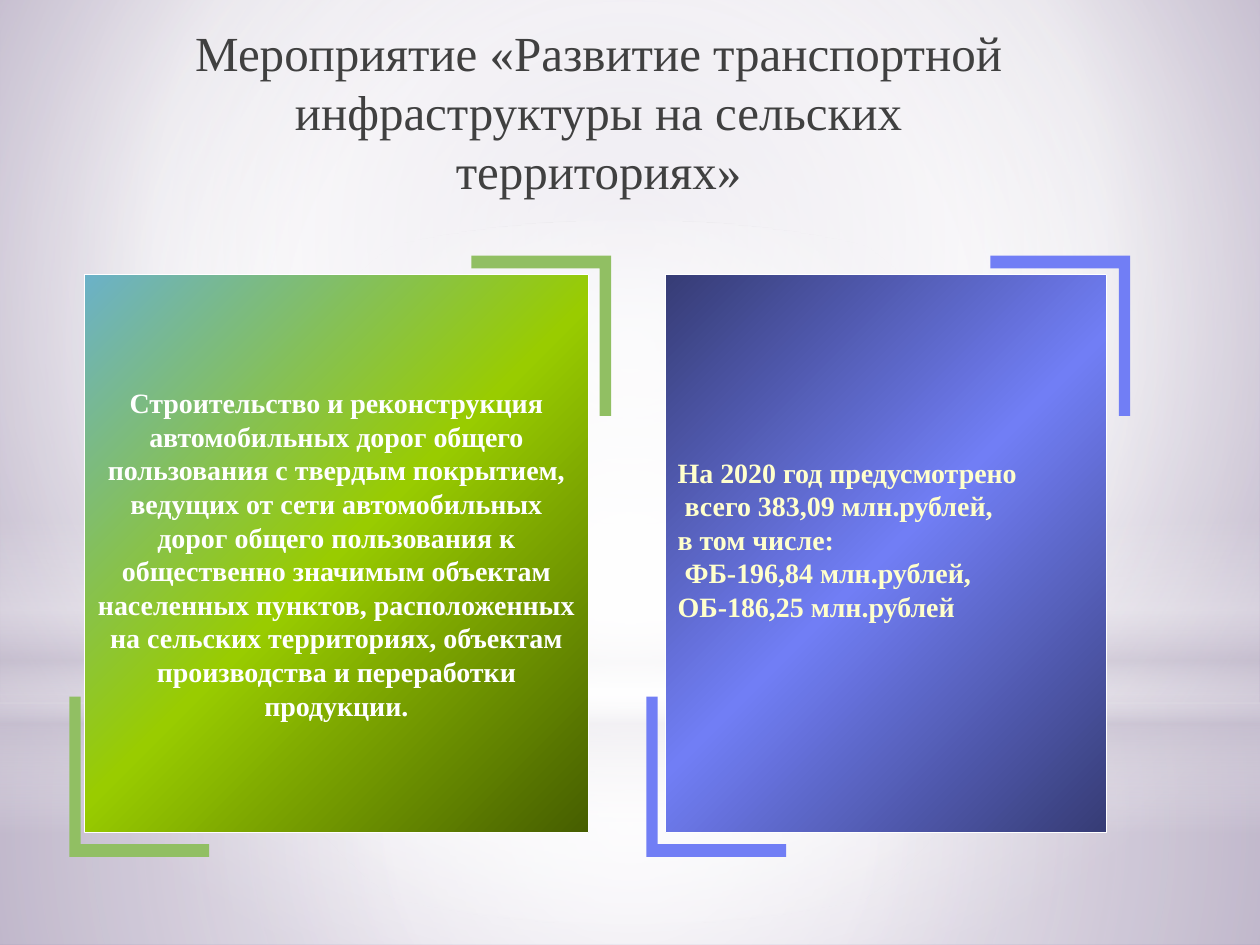
from lxml import etree
from pptx import Presentation
from pptx import util as u
from pptx.dml.color import RGBColor
from pptx.enum import shapes, text
from pptx.oxml.ns import qn


def rgb(value):
    return RGBColor.from_string(value)


def set_gradient(fill, owner, stops, angle=None, focus=(50, 50, 50, 50)):
    fill.gradient()
    gradient = next(owner.iter(qn("a:gradFill")))
    for child in list(gradient):
        gradient.remove(child)
    stop_list = etree.SubElement(gradient, qn("a:gsLst"))
    for position, value, opacity in stops:
        stop = etree.SubElement(stop_list, qn("a:gs"), pos=str(position * 1000))
        color = etree.SubElement(stop, qn("a:srgbClr"), val=value)
        if opacity < 100:
            etree.SubElement(color, qn("a:alpha"), val=str(opacity * 1000))
    if angle is not None:
        etree.SubElement(gradient, qn("a:lin"), ang=str(angle * 60000), scaled="0")
    else:
        circle = etree.SubElement(gradient, qn("a:path"), path="circle")
        sides = {side: str(share * 1000) for side, share in zip("ltrb", focus)}
        etree.SubElement(circle, qn("a:fillToRect"), **sides)


FONT = "Times New Roman"
RECT = shapes.MSO_SHAPE.RECTANGLE
OVAL = shapes.MSO_SHAPE.OVAL

prs = Presentation()
prs.slide_width, prs.slide_height = u.Inches(10), u.Inches(7.5)
slide = prs.slides.add_slide(prs.slide_layouts[5])
set_gradient(slide.background.fill, slide._element,
             [(0, "C1B7CD", 100), (60, "FFFFFF", 100), (100, "A191B5", 100)],
             focus=(20, 10, 20, 60))

backdrop = [
    (RECT, 5.58, 1.92, None,
     [(0, "FFFFFF", 91), (37, "FFFFFF", 76), (100, "C9C2D1", 79)]),
    (RECT, 0, 5.58, None,
     [(0, "FFFFFF", 89), (48, "FFFFFF", 62), (100, "C9C2D1", 79)]),
    (RECT, 4.12, 2.5, 90,
     [(0, "FFFFFF", 0), (29, "FFFFFF", 30), (45, "C9C2D1", 40),
      (55, "FFFFFF", 26), (65, "C9C2D1", 60), (100, "FFFFFF", 0)]),
    (OVAL, 1.75, 5.58, None, [(0, "FFFFFF", 100), (56, "FFFFFF", 0)]),
]
for outline, top, height, angle, stops in backdrop:
    glow = slide.shapes.add_shape(outline, 0, u.Inches(top), u.Inches(10), u.Inches(height))
    glow.shadow.inherit = False
    glow.line.fill.background()
    set_gradient(glow.fill, glow._element, stops, angle)

title = slide.shapes.title
slide.shapes._spTree.append(title._element)
title.left, title.top = u.Inches(1.19), u.Inches(0.13)
title.width, title.height = u.Inches(7.12), u.Inches(1.25)
title.text_frame.word_wrap = True
title.text_frame.auto_size = text.MSO_AUTO_SIZE.NONE
title.text_frame.vertical_anchor = text.MSO_ANCHOR.TOP
heading = title.text_frame.paragraphs[0]
heading.alignment = text.PP_ALIGN.CENTER
heading_run = heading.add_run()
heading_run.text = "Мероприятие «Развитие транспортной инфраструктуры на сельских территориях»"
heading_run.font.name = FONT
heading_run.font.size = u.Pt(28)
heading_run.font.color.rgb = rgb("404040")

CARD_TOP, CARD_HEIGHT = 2.18, 4.43
BRACKET_TOP, BRACKET_BOTTOM = 2.03, 6.8
ARM, RISE, BAR_WIDTH, BAR_HEIGHT = 1.11, 1.27, 0.09, 0.1

cards = [
    (0.67, 4, 0.55, 4.85, "91BF63", ("6BB1C9", "99CC00", "465E00"),
     "FFFFFF", text.PP_ALIGN.CENTER, 0.05,
     ["Строительство и реконструкция автомобильных дорог общего пользования "
      "с твердым покрытием, ведущих от сети автомобильных дорог общего пользования "
      "к общественно значимым объектам населенных пунктов, расположенных "
      "на сельских территориях, объектам производства и переработки продукции."]),
    (5.28, 3.5, 5.13, 8.97, "717EF5", ("363C75", "717EF5", "363C75"),
     "FFFFCC", text.PP_ALIGN.LEFT, 0.28,
     ["На 2020 год предусмотрено", " всего 383,09 млн.рублей,", "в том числе:",
      " ФБ-196,84 млн.рублей,", "ОБ-186,25 млн.рублей"]),
]
for (left, width, bracket_left, bracket_right, accent, shades,
     ink, alignment, bottom_inset, lines) in cards:
    for x, y, way in ((bracket_left, BRACKET_BOTTOM, 1), (bracket_right, BRACKET_TOP, -1)):
        offsets = [(ARM, 0), (ARM, BAR_HEIGHT), (BAR_WIDTH, BAR_HEIGHT),
                   (BAR_WIDTH, RISE), (0, RISE)]
        outline = slide.shapes.build_freeform(u.Inches(x), u.Inches(y))
        outline.add_line_segments(
            [(u.Inches(x + way * dx), u.Inches(y - way * dy)) for dx, dy in offsets])
        bracket = outline.convert_to_shape()
        bracket.shadow.inherit = False
        bracket.fill.solid()
        bracket.fill.fore_color.rgb = rgb(accent)
        bracket.line.fill.background()

    card = slide.shapes.add_shape(RECT, u.Inches(left), u.Inches(CARD_TOP),
                                  u.Inches(width), u.Inches(CARD_HEIGHT))
    card.shadow.inherit = False
    set_gradient(card.fill, card._element,
                 [(50 * i, shade, 100) for i, shade in enumerate(shades)], 45)
    card.line.color.rgb = rgb("FFFFFF")
    card.line.width = u.Pt(0.75)
    frame = card.text_frame
    frame.word_wrap = True
    frame.vertical_anchor = text.MSO_ANCHOR.MIDDLE
    frame.margin_bottom = u.Inches(bottom_inset)
    for number, line in enumerate(lines):
        paragraph = frame.add_paragraph() if number else frame.paragraphs[0]
        paragraph.alignment = alignment
        run = paragraph.add_run()
        run.text = line
        run.font.name = FONT
        run.font.size = u.Pt(16)
        run.font.bold = True
        run.font.color.rgb = rgb(ink)

prs.save("out.pptx")
